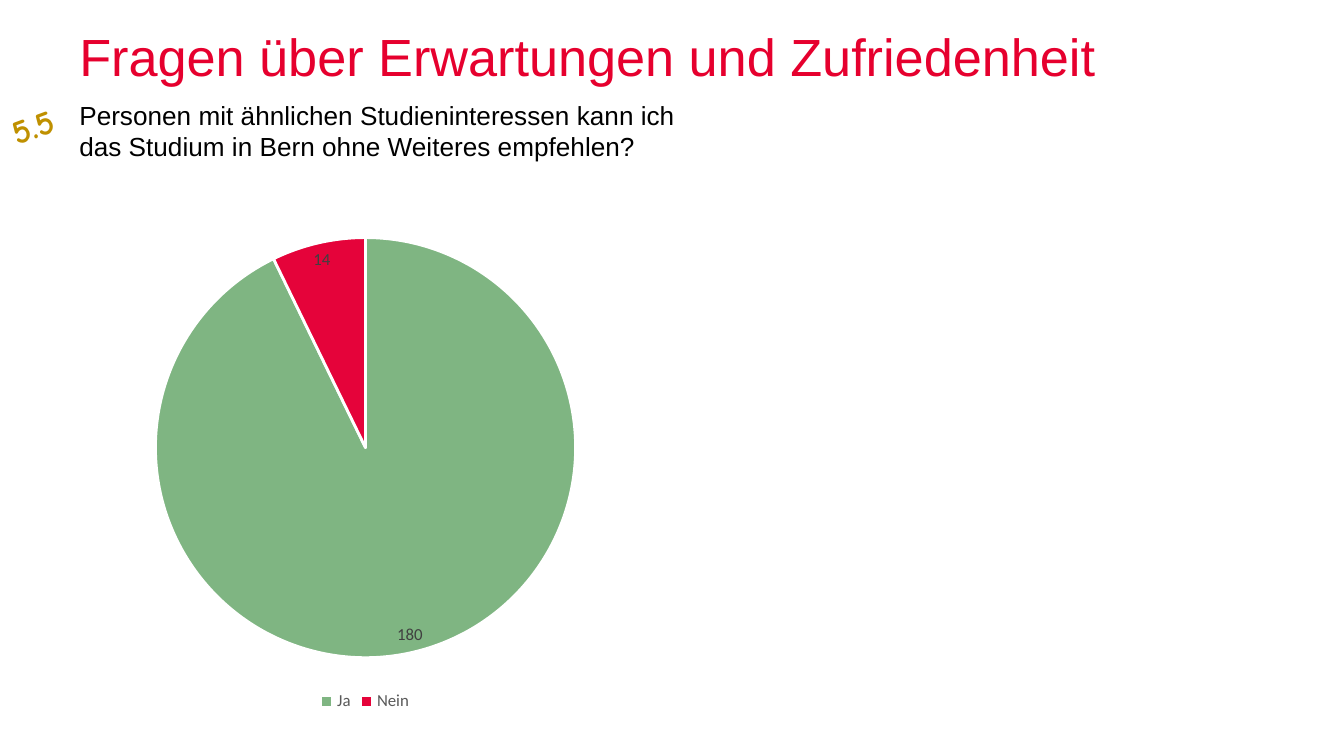
from pptx import Presentation
from pptx.chart.data import CategoryChartData
from pptx.dml.color import RGBColor
from pptx.enum.chart import XL_CHART_TYPE, XL_LABEL_POSITION, XL_LEGEND_POSITION
from pptx.enum.text import MSO_ANCHOR, MSO_AUTO_SIZE, PP_ALIGN
from pptx.util import Inches, Pt

WIDE = Inches(10)
HIGH = WIDE * 9 // 16
LEFT, SPAN, ROW = Inches(0.59), Inches(7.68), Inches(0.45)


def paint(part, code):
    """Set a font's or a fill's colour from a hex string."""
    if hasattr(part, "solid"):
        part.solid()
        part.fore_color.rgb = RGBColor.from_string(code)
    else:
        part.color.rgb = RGBColor.from_string(code)


def write(box, text, size, color, face="Arial", bold=False, lead=None,
          wrap=True, inset=0, anchor=MSO_ANCHOR.TOP, fit=MSO_AUTO_SIZE.NONE):
    frame = box.text_frame
    frame.text = text
    frame.word_wrap = wrap
    frame.auto_size = fit
    frame.vertical_anchor = anchor
    if inset is not None:
        frame.margin_left = frame.margin_right = inset
        frame.margin_top = frame.margin_bottom = inset
    for para in frame.paragraphs:
        para.alignment = PP_ALIGN.LEFT
        if lead:
            para.line_spacing = Pt(lead)
        for run in para.runs:
            run.font.size, run.font.name, run.font.bold = Pt(size), face, bold
            paint(run.font, color)


deck = Presentation()
deck.slide_width, deck.slide_height = WIDE, HIGH
slide = deck.slides.add_slide(deck.slide_layouts[5])
shapes = slide.shapes

title = shapes.title
title.left, title.top, title.width, title.height = LEFT, Inches(0.2), SPAN, ROW
write(title, "Fragen über Erwartungen und Zufriedenheit", 28, "E6002E",
      lead=32, anchor=MSO_ANCHOR.BOTTOM)

query = shapes.add_textbox(LEFT, Inches(0.74), SPAN, ROW)
write(query, "Personen mit ähnlichen Studieninteressen kann ich\n"
      "das Studium in Bern ohne Weiteres empfehlen?", 14, "000000")

data = CategoryChartData()
data.categories = ["Ja", "Nein"]
data.add_series("Series 1", [180, 14])
chart = shapes.add_chart(XL_CHART_TYPE.PIE, Inches(0.83), Inches(1.63),
                         Inches(3.78), Inches(3.7), data).chart
chart.has_title = False
chart.font.size, chart.font.name = Pt(10), "Calibri"
paint(chart.font, "000000")
chart.has_legend = True
legend = chart.legend
legend.position = XL_LEGEND_POSITION.BOTTOM
legend.include_in_layout = False

plot = chart.plots[0]
plot.vary_by_categories = True
pie = plot.series[0]
for i, color in enumerate(["7FB582", "E5033A"]):
    look = pie.points[i].format
    paint(look.fill, color)
    paint(look.line.fill, "FFFFFF")
    look.line.width = Pt(1.5)

labels = pie.data_labels
labels.show_value = True
labels.show_percentage = False
labels.position = XL_LABEL_POSITION.BEST_FIT
for font, color in [(legend.font, "595959"), (labels.font, "404040")]:
    font.size, font.name = Pt(9), "Calibri"
    paint(font, color)

mark = shapes.add_textbox(Inches(-0.01), Inches(0.73), Inches(0.55), Inches(0.4))
write(mark, "5.5", 18, "BF9000", face="Comic Neue", bold=True,
      wrap=False, inset=None, fit=MSO_AUTO_SIZE.SHAPE_TO_FIT_TEXT)
mark.rotation = 339.6

deck.save("out.pptx")
